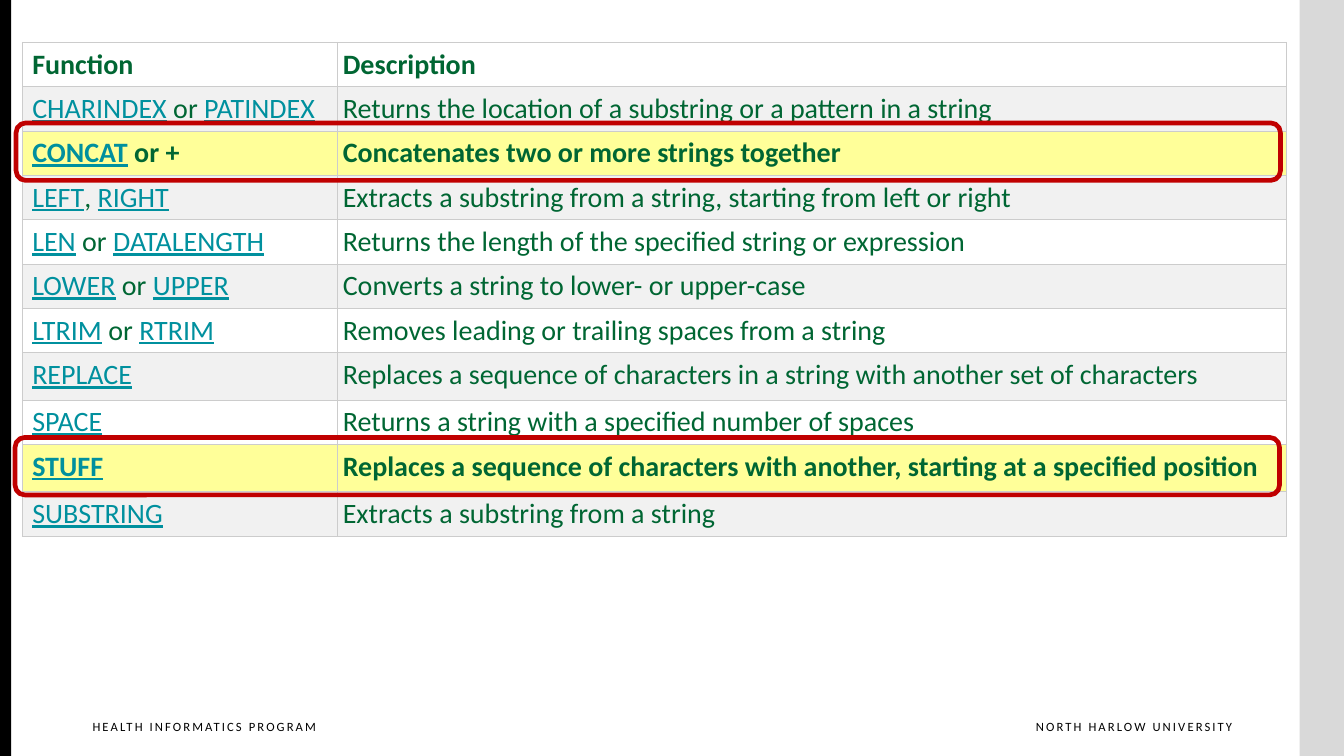
"""Build a slide with a table of string functions and two marked rows."""
from lxml import etree
from pptx import Presentation
from pptx.dml.color import RGBColor
from pptx.enum.shapes import MSO_SHAPE
from pptx.enum.text import PP_ALIGN
from pptx.oxml.ns import qn
from pptx.util import Inches, Pt

RECT, ROUND = MSO_SHAPE.RECTANGLE, MSO_SHAPE.ROUNDED_RECTANGLE
LEFT, RIGHT = PP_ALIGN.LEFT, PP_ALIGN.RIGHT
FONT, GREEN, TEAL, RED = "Calibri", "006633", "00909E", "C00000"
WHITE, GRAY, YELLOW, EDGE = "FFFFFF", "F1F1F1", "FFFF99", "CCCCCC"

HEAD = ("Function", "Description")
ROWS = [
    (("CHARINDEX", " or ", "PATINDEX"), "Returns the location of a substring or a pattern in a string"),
    (("CONCAT", " or +"), "Concatenates two or more strings together"),
    (("LEFT", ", ", "RIGHT"), "Extracts a substring from a string, starting from left or right"),
    (("LEN", " or ", "DATALENGTH"), "Returns the length of the specified string or expression"),
    (("LOWER", " or ", "UPPER"), "Converts a string to lower- or upper-case"),
    (("LTRIM", " or ", "RTRIM"), "Removes leading or trailing spaces from a string"),
    (("REPLACE",), "Replaces a sequence of characters in a string with another set of characters"),
    (("SPACE",), "Returns a string with a specified number of spaces"),
    (("STUFF",), "Replaces a sequence of characters with another, starting at a specified position"),
    (("SUBSTRING",), "Extracts a substring from a string"),
]
MARKED = ("CONCAT", "STUFF")
TALL = ("REPLACE", "STUFF")
WIDTHS = (3.13, 9.41)
BARS = [(12.89, 0.44, "D9D9D9"), (0, 0.11, "000000")]
FOOT = [
    (9.87, 2.35, RIGHT, "NORTH HARLOW UNIVERSITY"),
    (0.82, 2.54, LEFT, "HEALTH INFORMATICS PROGRAM"),
]
FRAMES = [(0.15, 4.34), (0.16, 1.22)]


def rgb(code):
    return RGBColor.from_string(code)


def add_run(para, text, size, color, bold=False, under=False):
    run = para.add_run()
    run.text = text
    font = run.font
    font.name, font.size, font.bold, font.underline = FONT, Pt(size), bold, under
    font.color.rgb = rgb(color)
    return run


def add_edges(cell):
    props = cell._tc.get_or_add_tcPr()
    for side in ("a:lnL", "a:lnR", "a:lnT", "a:lnB"):
        line = etree.SubElement(props, qn(side), w=str(Pt(0.75)))
        fill = etree.SubElement(line, qn("a:solidFill"))
        etree.SubElement(fill, qn("a:srgbClr"), val=EDGE)


def fill_cell(cell, col, parts, back, bold):
    add_edges(cell)
    cell.fill.solid()
    cell.fill.fore_color.rgb = rgb(back)
    cell.margin_left = Inches(0.05 if col else 0.1)
    cell.margin_right = cell.margin_top = cell.margin_bottom = Inches(0.05)
    para = cell.text_frame.paragraphs[0]
    for text, link in parts:
        add_run(para, text, 20, TEAL if link else GREEN, bold, link)


def add_grid(slide):
    frame = slide.shapes.add_table(
        len(ROWS) + 1, 2, Inches(0.22), Inches(0.42), Inches(sum(WIDTHS)), Inches(4.9))
    grid = frame.table
    for col, width in enumerate(WIDTHS):
        grid.columns[col].width = Inches(width)
        fill_cell(grid.cell(0, col), col, [(HEAD[col], False)], WHITE, True)
    grid.rows[0].height = Inches(0.44)
    for row, (names, note) in enumerate(ROWS, 1):
        grid.rows[row].height = Inches(0.47 if names[0] in TALL else 0.44)
        bold = names[0] in MARKED
        back = YELLOW if bold else GRAY if row % 2 or row == len(ROWS) else WHITE
        links = [(name, i % 2 == 0) for i, name in enumerate(names)]
        for col, parts in enumerate((links, [(note, False)])):
            fill_cell(grid.cell(row, col), col, parts, back, bold)


def add_bar(slide, left, width, color):
    bar = slide.shapes.add_shape(RECT, Inches(left), 0, Inches(width), Inches(7.5))
    bar.shadow.inherit = False
    bar.fill.solid()
    bar.fill.fore_color.rgb = rgb(color)
    bar.line.fill.background()


def add_foot(slide, left, width, align, text):
    box = slide.shapes.add_textbox(Inches(left), Inches(7.08), Inches(width), Inches(0.33))
    frame = box.text_frame
    frame.word_wrap = True
    frame.margin_right = 0
    para = frame.paragraphs[0]
    para.alignment = align
    run = add_run(para, text, 9, "000000")
    run._r.get_or_add_rPr().set("spc", "150")


def add_frame(slide, left, top):
    frame = slide.shapes.add_shape(ROUND, Inches(left), Inches(top), Inches(12.54), Inches(0.57))
    frame.shadow.inherit = False
    frame.fill.background()
    frame.line.color.rgb = rgb(RED)
    frame.line.width = Pt(3.35)


def main():
    deck = Presentation()
    deck.slide_width, deck.slide_height = Inches(13.33), Inches(7.5)
    slide = deck.slides.add_slide(deck.slide_layouts[6])
    for bar in BARS:
        add_bar(slide, *bar)
    for foot in FOOT:
        add_foot(slide, *foot)
    add_grid(slide)
    for frame in FRAMES:
        add_frame(slide, *frame)
    deck.save("out.pptx")


if __name__ == "__main__":
    main()
